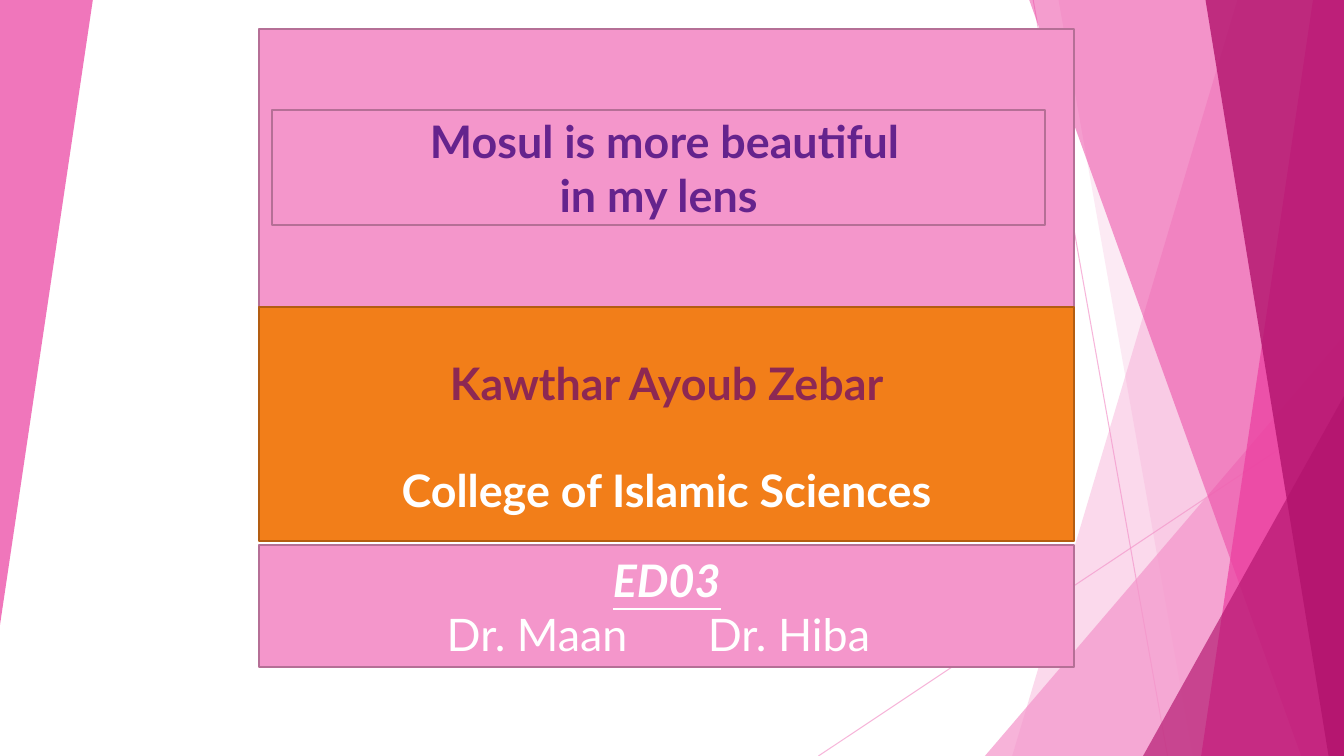
from dataclasses import dataclass

from lxml import etree
from pptx import Presentation
from pptx import util as u
from pptx.dml.color import RGBColor
from pptx.enum import shapes, text
from pptx.oxml import ns


@dataclass(frozen=True)
class Theme:
    font: str = "Lato"
    size: float = 32
    pink: str = "F496CB"
    pink_edge: str = "B56F96"
    magenta: str = "EB3D9F"
    berry: str = "B2136D"
    orange: str = "F27E19"
    orange_edge: str = "B35D12"
    purple: str = "65238D"
    wine: str = "8D2853"
    white: str = "FFFFFF"


class Slide:
    def __init__(self, page, theme):
        self.page = page
        self.theme = theme

    def fade(self, shape, percent):
        for color in shape._element.spPr.iter(ns.qn("a:srgbClr")):
            etree.SubElement(color, ns.qn("a:alpha"), val=str(percent * 1000))

    def paint(self, shape, color, edge=None):
        shape.shadow.inherit = False
        shape.fill.solid()
        shape.fill.fore_color.rgb = RGBColor.from_string(color)
        if edge:
            shape.line.color.rgb = RGBColor.from_string(edge)
            shape.line.width = u.Pt(1.5)
        else:
            shape.line.fill.background()

    def ray(self, *ends):
        line = self.page.shapes.add_connector(
            shapes.MSO_CONNECTOR.STRAIGHT, *map(u.Pt, ends))
        line.line.color.rgb = RGBColor.from_string(self.theme.pink)
        line.line.width = u.Pt(0.75)
        etree.SubElement(line._element.spPr, ns.qn("a:effectLst"))
        self.fade(line, 70)

    def facet(self, top_x, bottom_x, color, opacity):
        """Band from a slanted left edge to the right edge of the slide."""
        corners = [(960, -0.6), (960, 540), (bottom_x, 540)]
        outline = self.page.shapes.build_freeform(u.Pt(top_x), u.Pt(-0.6))
        outline.add_line_segments([(u.Pt(x), u.Pt(y)) for x, y in corners])
        band = outline.convert_to_shape()
        self.paint(band, color)
        self.fade(band, opacity)

    def triangle(self, frame, color, opacity, rotation=0):
        corner = self.page.shapes.add_shape(
            shapes.MSO_SHAPE.ISOSCELES_TRIANGLE, *map(u.Pt, frame))
        corner.adjustments[0] = 1
        corner.rotation = rotation
        self.paint(corner, color)
        self.fade(corner, opacity)

    def panel(self, frame, color, edge, top_inset=3.6):
        box = self.page.shapes.add_shape(
            shapes.MSO_SHAPE.RECTANGLE, *map(u.Pt, frame))
        self.paint(box, color, edge)
        box.text_frame.word_wrap = True
        box.text_frame.margin_top = u.Pt(top_inset)
        box.text_frame.vertical_anchor = text.MSO_ANCHOR.MIDDLE
        return box

    def add_para(self, box, words, color, bold=True, accent=False, before=0,
                 rtl=False, tabs=()):
        frame = box.text_frame
        para = frame.paragraphs[0]
        if para.runs:
            para = frame.add_paragraph()
        para.add_run().text = words
        para.alignment = text.PP_ALIGN.LEFT if tabs else text.PP_ALIGN.CENTER
        if before:
            para.space_before = u.Pt(before)
        props = para._p.get_or_add_pPr()
        if rtl:
            props.set("rtl", "1")
        if tabs:
            stops = etree.SubElement(props, ns.qn("a:tabLst"))
            for stop in tabs:
                etree.SubElement(stops, ns.qn("a:tab"),
                                 pos=str(u.Pt(stop)), algn="l")
        font = para.font
        font.name = self.theme.font
        font.size = u.Pt(self.theme.size)
        font.bold = bold
        font.italic = accent
        font.underline = accent
        font.color.rgb = RGBColor.from_string(color)


def main():
    deck = Presentation()
    deck.slide_width, deck.slide_height = u.Pt(960), u.Pt(540)
    theme = Theme()
    slide = Slide(deck.slides.add_slide(deck.slide_layouts[6]), theme)

    # Backdrop: thin rays and translucent facets
    slide.ray(738, 0, 834, 540)
    slide.ray(960, 290, 584.6, 540)
    slide.facet(884, 723, theme.pink, 36)
    slide.facet(756, 852, theme.pink, 20)
    slide.triangle((703.5, 240, 256.5, 300), theme.pink, 72)
    slide.facet(735, 929.5, theme.magenta, 50)
    slide.facet(938, 858, theme.magenta, 70)
    slide.facet(861, 949, theme.berry, 80)
    slide.triangle((816.5, 283, 143.5, 257), theme.berry, 66)
    slide.triangle((0, 0, 66.3, 446.3), theme.magenta, 70, rotation=180)

    # Stacked panels share one left edge and width
    left, width = 185, 582.5
    slide.panel((left, 20.6, width, 198.6), theme.pink, theme.pink_edge)

    # Course and lecturers
    course = slide.panel((left, 389.5, width, 87), theme.pink, theme.pink_edge)
    slide.add_para(course, "ED03", theme.white, accent=True)
    slide.add_para(course, "\tDr. Maan\tDr. Hiba", theme.white, bold=False,
                   tabs=(127, 313.5))

    # Author and college
    author = slide.panel((left, 219.2, width, 167.5), theme.orange,
                         theme.orange_edge, top_inset=20.4)
    slide.add_para(author, "Kawthar Ayoub Zebar", theme.wine)
    slide.add_para(author, "College of Islamic Sciences", theme.white,
                   before=38.4)

    # Title
    title = slide.panel((194.4, 78.5, 552, 82), theme.pink, theme.pink_edge)
    slide.add_para(title, "Mosul is more beautiful ", theme.purple, rtl=True)
    slide.add_para(title, "in my lens", theme.purple, rtl=True)

    deck.save("out.pptx")


if __name__ == "__main__":
    main()
